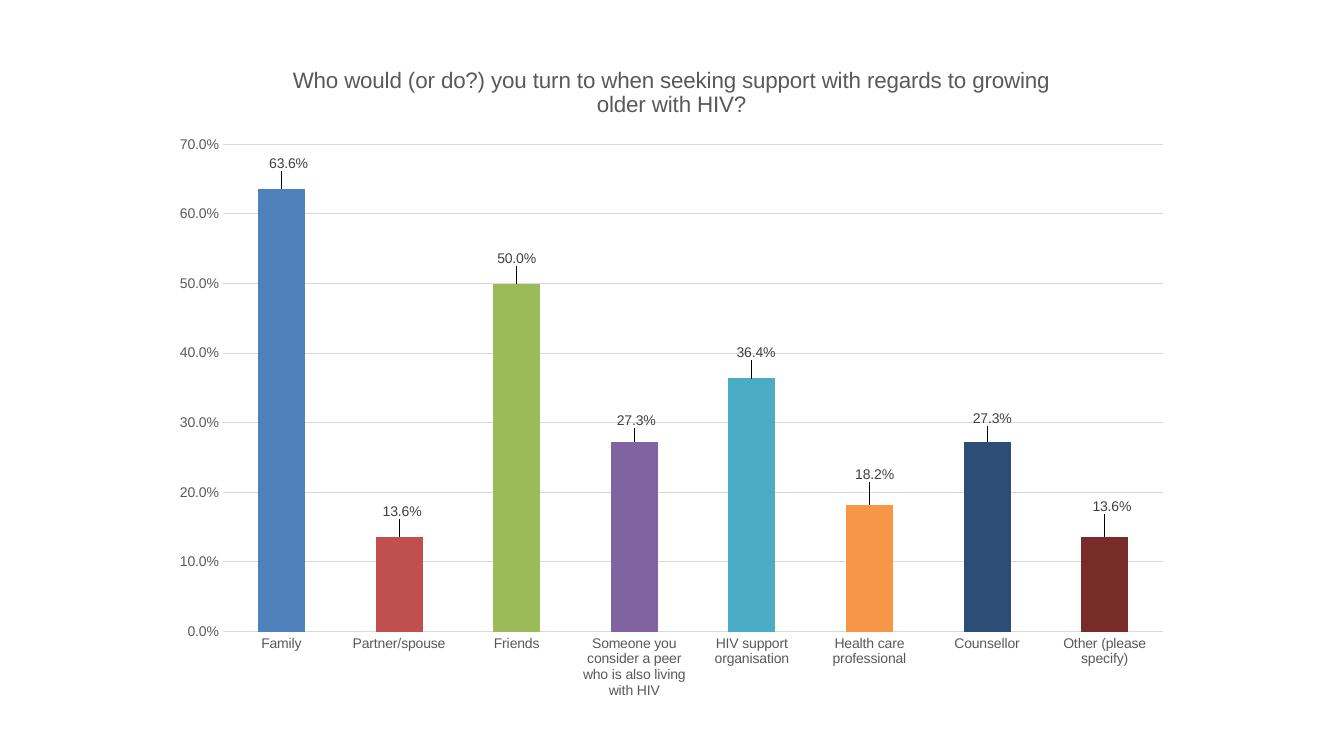
from dataclasses import dataclass

from lxml import etree
from pptx import Presentation
from pptx import util as u
from pptx.chart.data import CategoryChartData
from pptx.dml.color import RGBColor
from pptx.enum import chart as charts
from pptx.oxml import ns

TITLE = "Who would (or do?) you turn to when seeking support with regards to growing older with HIV?"
NUMBER_FORMAT = "0.0%"
SUPPORT_SOURCES = [
    ("Family", 0.636, "4F81BD", (0.007, -0.02)),
    ("Partner/spouse", 0.136, "C0504D", (0.003, -0.02)),
    ("Friends", 0.5, "9BBB59", (0, -0.02)),
    ("Someone you consider a peer who is also living with HIV", 0.273, "8064A2", (0.002, -0.013)),
    ("HIV support organisation", 0.364, "4BACC6", (0.004, -0.02)),
    ("Health care professional", 0.182, "F79646", (0.005, -0.028)),
    ("Counsellor", 0.273, "2C4D75", (0.005, -0.016)),
    ("Other (please specify)", 0.136, "772C2A", (0.007, -0.028)),
]
CHART_BOX = (4.01, 1.09, 25.83, 16.87)
PLOT_BOX = {"x": 0.062, "y": 0.151, "w": 0.918, "h": 0.728}


@dataclass(frozen=True)
class Theme:
    font: str = "Arial"
    text: str = "595959"
    label: str = "404040"
    grid: str = "D9D9D9"
    title_size: int = 16
    body_size: int = 10


THEME = Theme()


def format_font(font, size=THEME.body_size, color=THEME.text):
    font.name = THEME.font
    font.size = u.Pt(size)
    font.bold = False
    font.color.rgb = RGBColor.from_string(color)


def write_text(text_frame, text, **font_format):
    paragraph = text_frame.paragraphs[0]
    run = paragraph.add_run()
    run.text = text
    format_font(run.font, **font_format)


def make_layout(values, modes):
    layout = etree.Element(ns.qn("c:layout"))
    manual = etree.SubElement(layout, ns.qn("c:manualLayout"))
    for tag, value in {**modes, **values}.items():
        etree.SubElement(manual, ns.qn(f"c:{tag}")).set("val", str(value))
    return layout


def place_plot(chart):
    plot_area = chart._chartSpace.chart.plotArea
    for layout in plot_area.findall(ns.qn("c:layout")):
        plot_area.remove(layout)
    modes = {"layoutTarget": "inner", "xMode": "edge", "yMode": "edge"}
    plot_area.insert(0, make_layout(PLOT_BOX, modes))


def format_axis(axis):
    axis.major_tick_mark = charts.XL_TICK_MARK.NONE
    axis.minor_tick_mark = charts.XL_TICK_MARK.NONE
    axis.format.line.fill.background()
    format_font(axis.tick_labels.font)


def format_point(series, index, color, offset):
    point = series.points[index]
    point.format.fill.solid()
    point.format.fill.fore_color.rgb = RGBColor.from_string(color)
    label = point.data_label
    label.position = charts.XL_LABEL_POSITION.OUTSIDE_END
    format_font(label.font, color=THEME.label)
    element = series._element.xpath(f"c:dLbls/c:dLbl[c:idx/@val='{index}']")[0]
    number_format = etree.Element(ns.qn("c:numFmt"), formatCode=NUMBER_FORMAT, sourceLinked="0")
    element.insert(1, make_layout(dict(zip("xy", offset)), {}))
    element.insert(2, number_format)


def add_support_chart(slide):
    data = CategoryChartData(number_format=NUMBER_FORMAT)
    data.categories = [source[0] for source in SUPPORT_SOURCES]
    data.add_series("Series 1", [source[1] for source in SUPPORT_SOURCES])
    chart = slide.shapes.add_chart(
        charts.XL_CHART_TYPE.COLUMN_CLUSTERED, *map(u.Cm, CHART_BOX), data
    ).chart
    format_font(chart.font)
    chart.has_legend = False
    chart.has_title = True
    write_text(chart.chart_title.text_frame, TITLE, size=THEME.title_size)
    chart.chart_title.include_in_layout = False
    place_plot(chart)

    format_axis(chart.category_axis)
    value_axis = chart.value_axis
    format_axis(value_axis)
    value_axis.minimum_scale, value_axis.maximum_scale, value_axis.major_unit = 0, 0.7, 0.1
    value_axis.tick_labels.number_format = NUMBER_FORMAT
    value_axis.tick_labels.number_format_is_linked = False
    grid_line = value_axis.major_gridlines.format.line
    grid_line.width = u.Pt(0.75)
    grid_line.color.rgb = RGBColor.from_string(THEME.grid)

    plot = chart.plots[0]
    plot.gap_width = 150
    plot.vary_by_categories = False
    series = plot.series[0]
    labels = series.data_labels
    labels.show_value = True
    labels.number_format = NUMBER_FORMAT
    labels.number_format_is_linked = False
    labels.position = charts.XL_LABEL_POSITION.OUTSIDE_END
    format_font(labels.font, color=THEME.label)
    for index, (_, _, color, offset) in enumerate(SUPPORT_SOURCES):
        format_point(series, index, color, offset)


def main():
    presentation = Presentation()
    presentation.slide_width = u.Cm(33.87)
    presentation.slide_height = u.Cm(19.05)
    slide = presentation.slides.add_slide(presentation.slide_layouts.get_by_name("Blank"))
    add_support_chart(slide)
    presentation.save("out.pptx")


if __name__ == "__main__":
    main()
